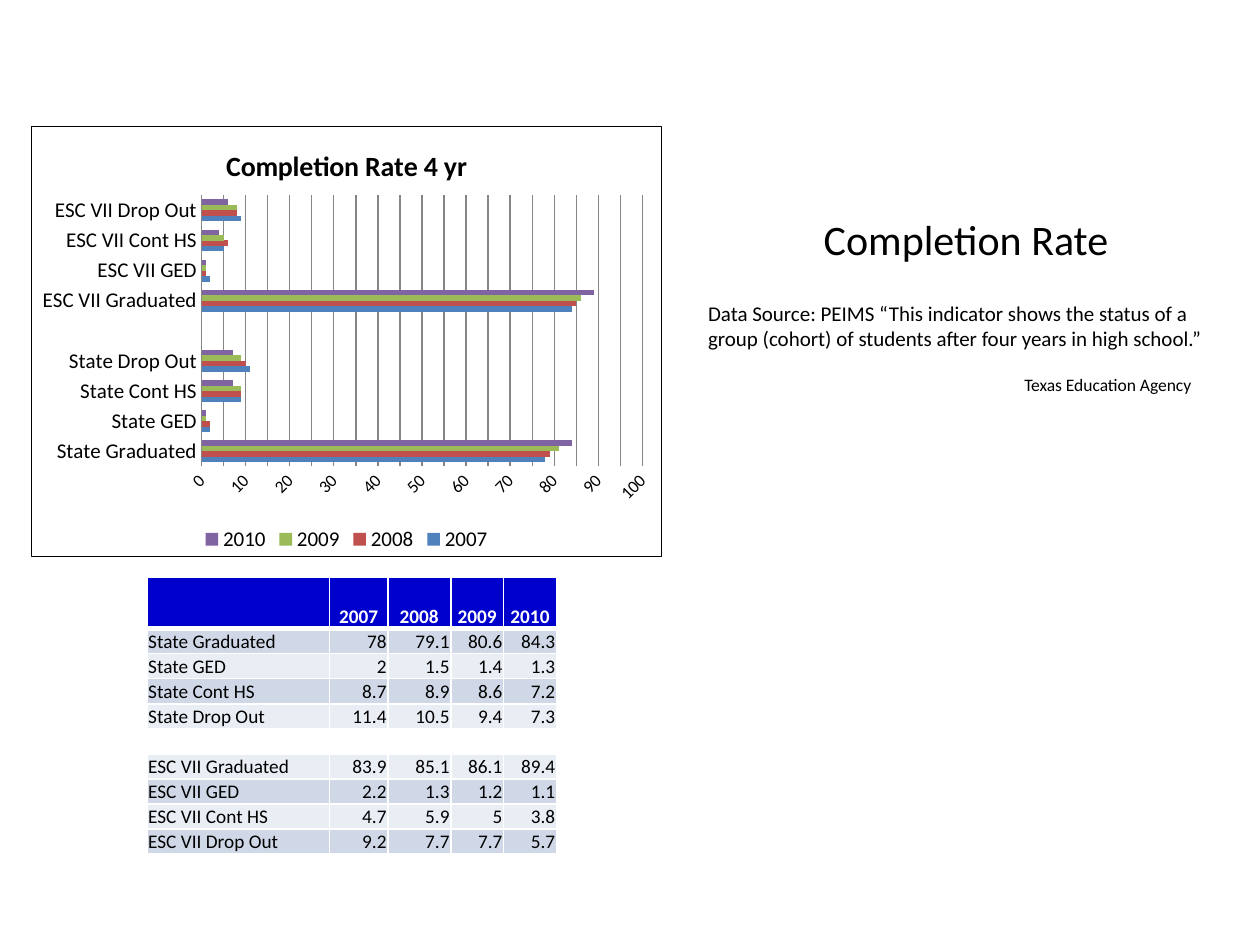
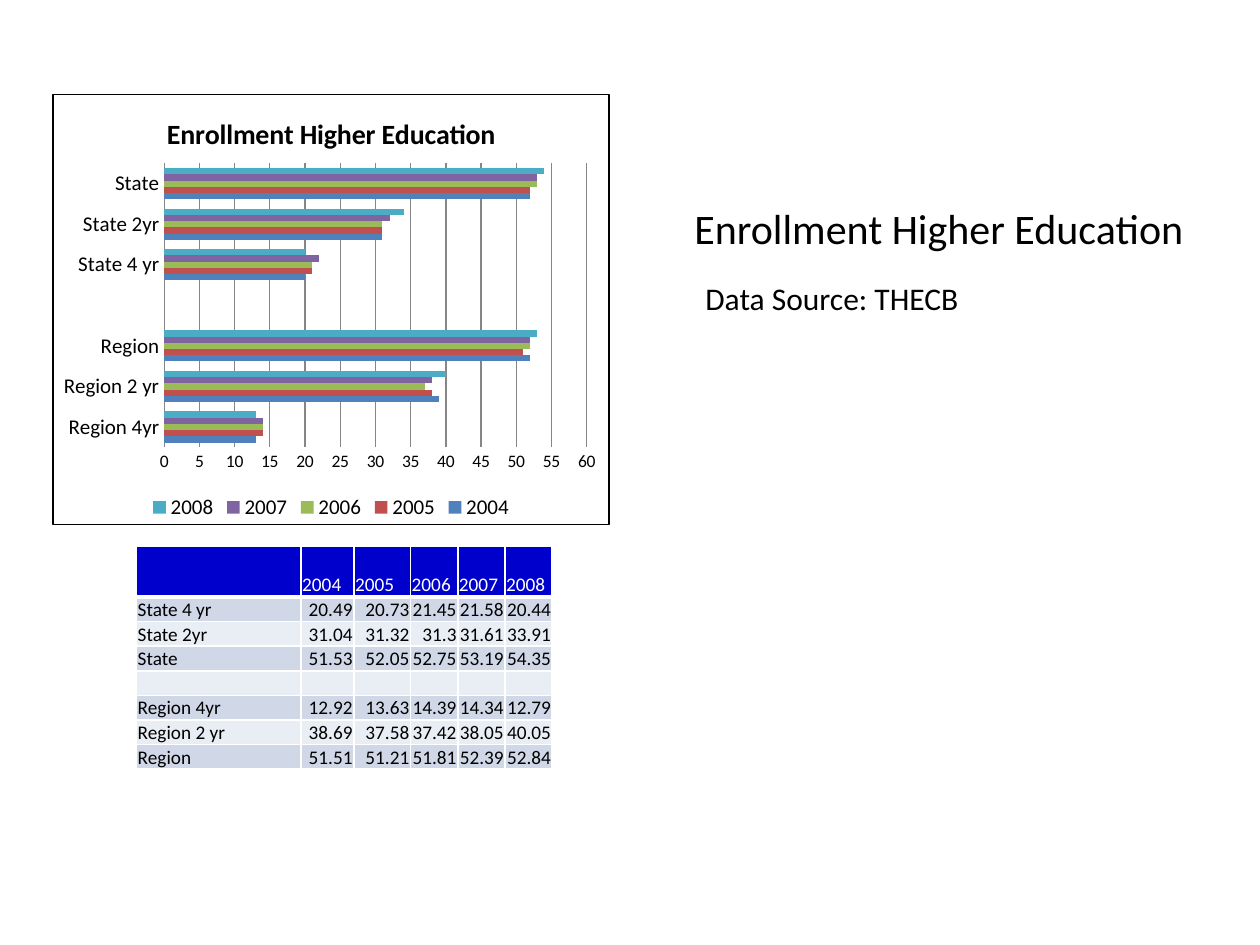
from dataclasses import dataclass

from lxml import etree
from pptx import Presentation
from pptx.chart.data import CategoryChartData
from pptx.dml.color import RGBColor
from pptx.enum import chart as ch, text
from pptx.oxml import parse_xml
from pptx.oxml.ns import nsdecls, qn
from pptx.util import Pt


@dataclass(frozen=True)
class Theme:
    font: str = "Calibri"
    ink: str = "000000"
    paper: str = "FFFFFF"
    header: str = "0000CC"
    bands: tuple = ("E9EDF4", "D0D8E8")
    grid: str = "868686"
    series: tuple = ("4F81BD", "C0504D", "9BBB59", "8064A2", "4BACC6")
    title: int = 24
    source: int = 18
    body: int = 12
    credit: int = 10
    chart_title: int = 16
    chart_label: int = 12
    axis_value: int = 10
    cell: int = 11


T = Theme()
LEFT, CENTER, RIGHT = text.PP_ALIGN.LEFT, text.PP_ALIGN.CENTER, text.PP_ALIGN.RIGHT

# A row of None values is the gap between the two groups.
COMPLETION_YEARS = ["2007", "2008", "2009", "2010"]
COMPLETION = [
    ("State Graduated", 78, 79.1, 80.6, 84.3),
    ("State GED", 2, 1.5, 1.4, 1.3),
    ("State Cont HS", 8.7, 8.9, 8.6, 7.2),
    ("State Drop Out", 11.4, 10.5, 9.4, 7.3),
    ("", None, None, None, None),
    ("ESC VII Graduated", 83.9, 85.1, 86.1, 89.4),
    ("ESC VII GED", 2.2, 1.3, 1.2, 1.1),
    ("ESC VII Cont HS", 4.7, 5.9, 5, 3.8),
    ("ESC VII Drop Out", 9.2, 7.7, 7.7, 5.7),
]
ENROLLMENT_YEARS = ["2004", "2005", "2006", "2007", "2008"]
ENROLLMENT = [
    ("State 4 yr", 20.49, 20.73, 21.45, 21.58, 20.44),
    ("State 2yr", 31.04, 31.32, 31.3, 31.61, 33.91),
    ("State", 51.53, 52.05, 52.75, 53.19, 54.35),
    ("", None, None, None, None, None),
    ("Region 4yr", 12.92, 13.63, 14.39, 14.34, 12.79),
    ("Region 2 yr", 38.69, 37.58, 37.42, 38.05, 40.05),
    ("Region", 51.51, 51.21, 51.81, 52.39, 52.84),
]


def rgb(color):
    return RGBColor.from_string(color)


def set_font(font, size, color=T.ink, bold=False):
    font.name, font.size, font.bold = T.font, Pt(size), bold
    font.color.rgb = rgb(color)


def add_text(slide, box, words, size, align=LEFT, anchor=text.MSO_ANCHOR.TOP):
    tf = slide.shapes.add_textbox(*map(Pt, box)).text_frame
    tf.word_wrap = True
    tf.vertical_anchor = anchor
    p = tf.paragraphs[0]
    p.text, p.alignment = words, align
    set_font(p.font, size)


def add_title(slide, box, words):
    add_text(slide, box, words, T.title, CENTER, text.MSO_ANCHOR.MIDDLE)


def frame_chart(chart):
    """Give the chart area a white fill and a thin outline."""
    sp_pr = parse_xml(
        f'<c:spPr {nsdecls("c", "a")}>'
        f'<a:solidFill><a:srgbClr val="{T.paper}"/></a:solidFill>'
        f'<a:ln w="{Pt(0.75)}"><a:solidFill><a:srgbClr val="{T.ink}"/></a:solidFill></a:ln>'
        "</c:spPr>")
    chart.element.find(qn("c:chart")).addnext(sp_pr)


def place_plot(chart, area):
    """Fix the inner plot area, as x, y, w, h shares of the chart."""
    plot_area = chart.element.find(qn("c:chart")).find(qn("c:plotArea"))
    for old in plot_area.findall(qn("c:layout")):
        plot_area.remove(old)
    layout = etree.Element(qn("c:layout"))
    manual = etree.SubElement(layout, qn("c:manualLayout"))
    settings = [("layoutTarget", "inner"), ("xMode", "edge"), ("yMode", "edge"),
                *zip("xywh", map(str, area))]
    for name, value in settings:
        etree.SubElement(manual, qn(f"c:{name}"), val=value)
    plot_area.insert(0, layout)


def style_axes(chart, maximum, label_angle):
    cats, vals = chart.category_axis, chart.value_axis
    for axis, size in ((cats, T.chart_label), (vals, T.axis_value)):
        axis.major_tick_mark = axis.minor_tick_mark = ch.XL_TICK_MARK.NONE
        set_font(axis.tick_labels.font, size)
    cats.format.line.color.rgb = rgb(T.grid)
    vals.minimum_scale, vals.maximum_scale, vals.major_unit = 0, maximum, 5
    vals.has_major_gridlines = True
    grid = vals.major_gridlines.format.line
    grid.color.rgb, grid.width = rgb(T.grid), Pt(0.75)
    vals.format.line.fill.background()
    if label_angle:
        body = vals._element.find(qn("c:txPr")).find(qn("a:bodyPr"))
        body.set("rot", str(label_angle * 60000))


def add_bar_chart(slide, box, plot_share, title, years, rows, maximum, label_angle=0):
    """Draw the rows as clustered bars, rounded to whole numbers."""
    data = CategoryChartData()
    data.categories = [row[0] for row in rows]
    for i, year in enumerate(years, 1):
        data.add_series(year, [None if row[i] is None else round(row[i]) for row in rows])
    chart = slide.shapes.add_chart(
        ch.XL_CHART_TYPE.BAR_CLUSTERED, *map(Pt, box), data).chart
    set_font(chart.font, 18)
    frame_chart(chart)
    place_plot(chart, plot_share)

    chart.has_title = True
    p = chart.chart_title.text_frame.paragraphs[0]
    p.text = title
    set_font(p.font, T.chart_title, bold=True)
    chart.chart_title.include_in_layout = False

    chart.has_legend = True
    chart.legend.position = ch.XL_LEGEND_POSITION.BOTTOM
    chart.legend.include_in_layout = False
    set_font(chart.legend.font, T.chart_label)

    plot = chart.plots[0]
    plot.gap_width, plot.vary_by_categories = 150, False
    for series, color in zip(plot.series, T.series):
        series.format.fill.solid()
        series.format.fill.fore_color.rgb = rgb(color)
    style_axes(chart, maximum, label_angle)


def set_borders(cell, bottom):
    tc_pr = cell._tc.get_or_add_tcPr()
    widths = {"lnL": 1, "lnR": 1, "lnT": 1, "lnB": bottom}
    for i, (side, width) in enumerate(widths.items()):
        ln = etree.Element(qn(f"a:{side}"), w=str(Pt(width)))
        fill = etree.SubElement(ln, qn("a:solidFill"))
        etree.SubElement(fill, qn("a:srgbClr"), val=T.paper)
        tc_pr.insert(i, ln)


def fill_cell(cell, words, fill, align, color=T.ink, bold=False, bottom=1):
    cell.margin_left = cell.margin_right = cell.margin_top = Pt(0.7)
    cell.margin_bottom = 0
    cell.vertical_anchor = text.MSO_ANCHOR.BOTTOM
    cell.fill.solid()
    cell.fill.fore_color.rgb = rgb(fill)
    set_borders(cell, bottom)
    p = cell.text_frame.paragraphs[0]
    p.alignment = align
    if words:
        p.text = words
    else:  # keeps an empty row as low as the others
        etree.SubElement(p._p, qn("a:endParaRPr"), sz=str(T.cell * 100))
    set_font(p.font, T.cell, color, bold)


def add_rate_table(slide, left, top, widths, row_height, years, rows,
                   header_align=LEFT, header_bold=False, gap_fill=None):
    header_height = 29.2
    table = slide.shapes.add_table(
        len(rows) + 1, len(widths), Pt(left), Pt(top), Pt(sum(widths)),
        Pt(header_height + row_height * len(rows))).table
    table.horz_banding = False
    for column, width in zip(table.columns, widths):
        column.width = Pt(width)
    for i, row in enumerate(table.rows):
        row.height = Pt(row_height if i else header_height)

    for c, year in enumerate(["", *years]):
        fill_cell(table.cell(0, c), year, T.header, header_align,
                  T.paper, header_bold, bottom=3)
    for r, (name, *values) in enumerate(rows, 1):
        fill = T.bands[r % 2] if name else gap_fill or T.bands[r % 2]
        fill_cell(table.cell(r, 0), name, fill, LEFT)
        for c, value in enumerate(values, 1):
            words = "" if value is None else f"{value:g}"
            fill_cell(table.cell(r, c), words, fill, RIGHT)


def build_completion(slide):
    add_title(slide, (396, 108.5, 312, 56), "Completion Rate")
    add_bar_chart(slide, (17.75, 72, 360.5, 246.5), (0.27, 0.16, 0.7, 0.63),
                  "Completion Rate 4 yr", COMPLETION_YEARS, COMPLETION, 100,
                  label_angle=-45)
    add_rate_table(slide, 84, 330, [104.4, 33.2, 36, 30.2, 30.2], 14.33,
                   COMPLETION_YEARS, COMPLETION, CENTER, True, T.paper)
    add_text(slide, (397.5, 168, 300, 36),
             "Data Source: PEIMS “This indicator shows the status of a group "
             "(cohort) of students after four years in high school.”", T.body)
    add_text(slide, (558, 210, 150, 19.5), "Texas Education Agency", T.credit, CENTER)


def build_enrollment(slide):
    title = "Enrollment Higher Education"
    gap = next(i for i, row in enumerate(ENROLLMENT) if not row[0])
    region_first = ENROLLMENT[gap + 1:] + [ENROLLMENT[gap]] + ENROLLMENT[:gap]
    add_title(slide, (353.5, 102, 366, 56), title)
    add_bar_chart(slide, (29.9, 53.75, 318.5, 246.5), (0.2, 0.16, 0.76, 0.66),
                  title, ENROLLMENT_YEARS, region_first, 60)
    add_text(slide, (396, 156, 192, 29), "Data Source: THECB", T.source)
    add_rate_table(slide, 78, 312, [94, 30.2, 32.4, 27, 27, 27], 14.05,
                   ENROLLMENT_YEARS, ENROLLMENT)


def main():
    prs = Presentation()
    prs.slide_width, prs.slide_height = Pt(720), Pt(540)
    for build in (build_completion, build_enrollment):
        build(prs.slides.add_slide(prs.slide_layouts[6]))
    prs.save("out.pptx")


if __name__ == "__main__":
    main()
